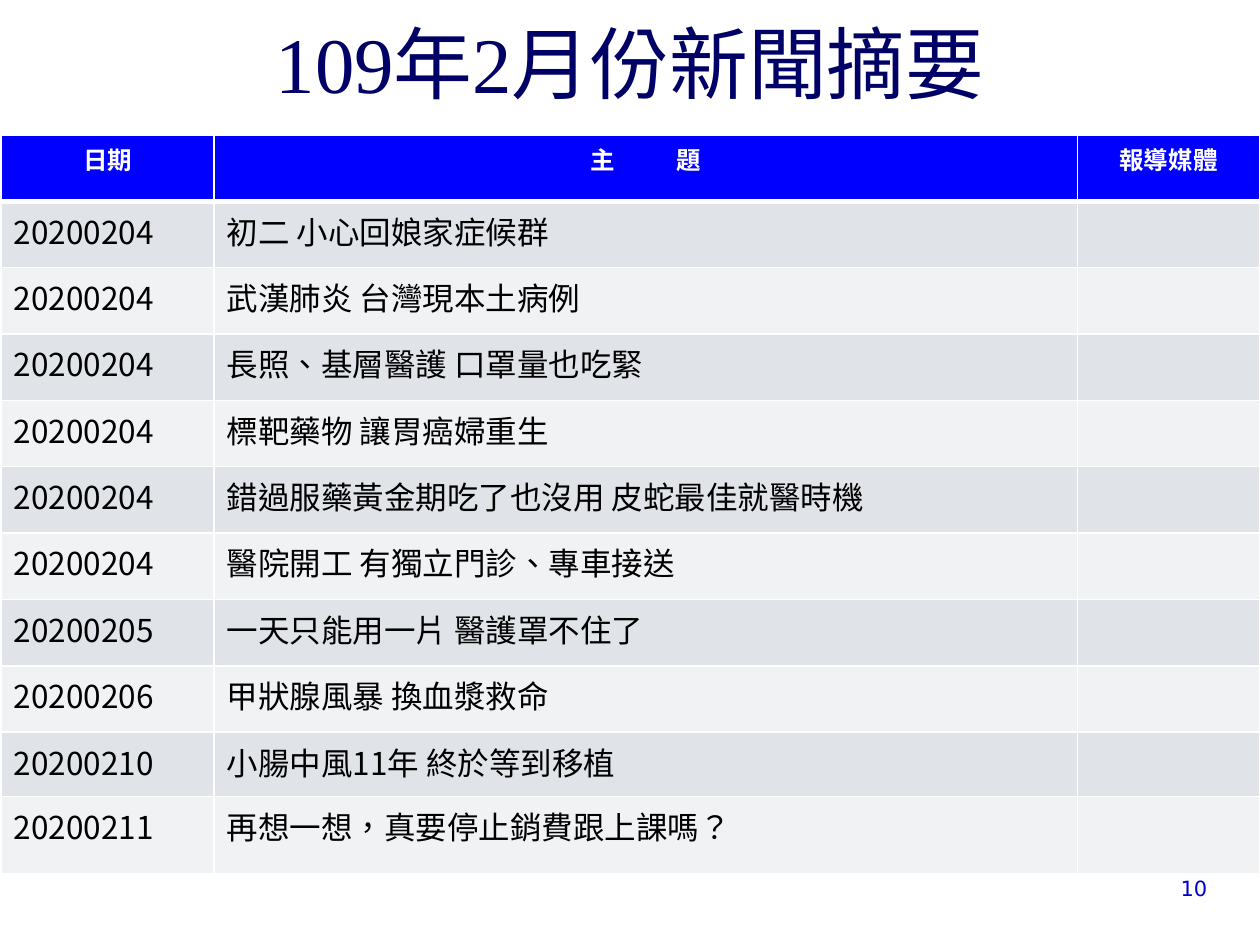
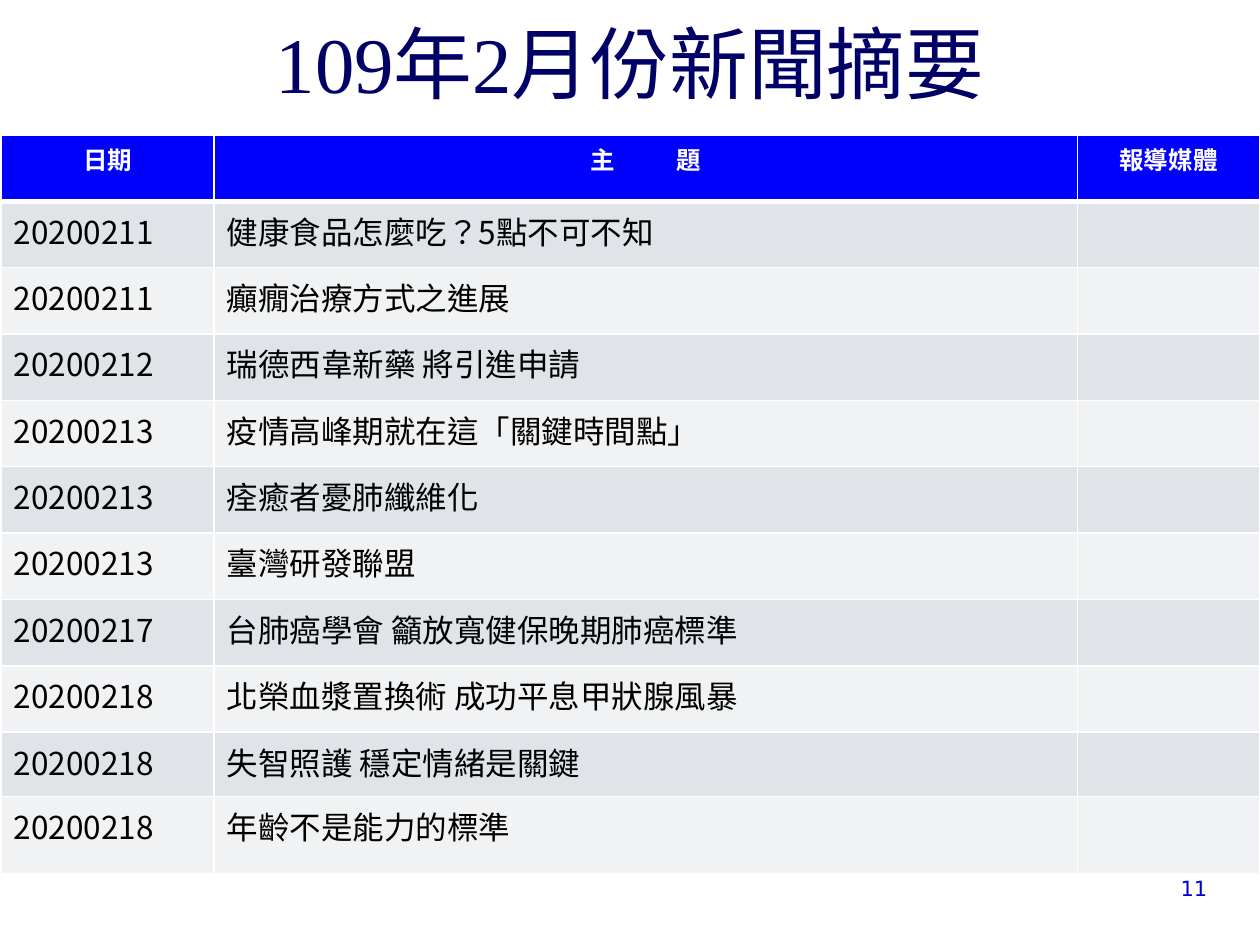
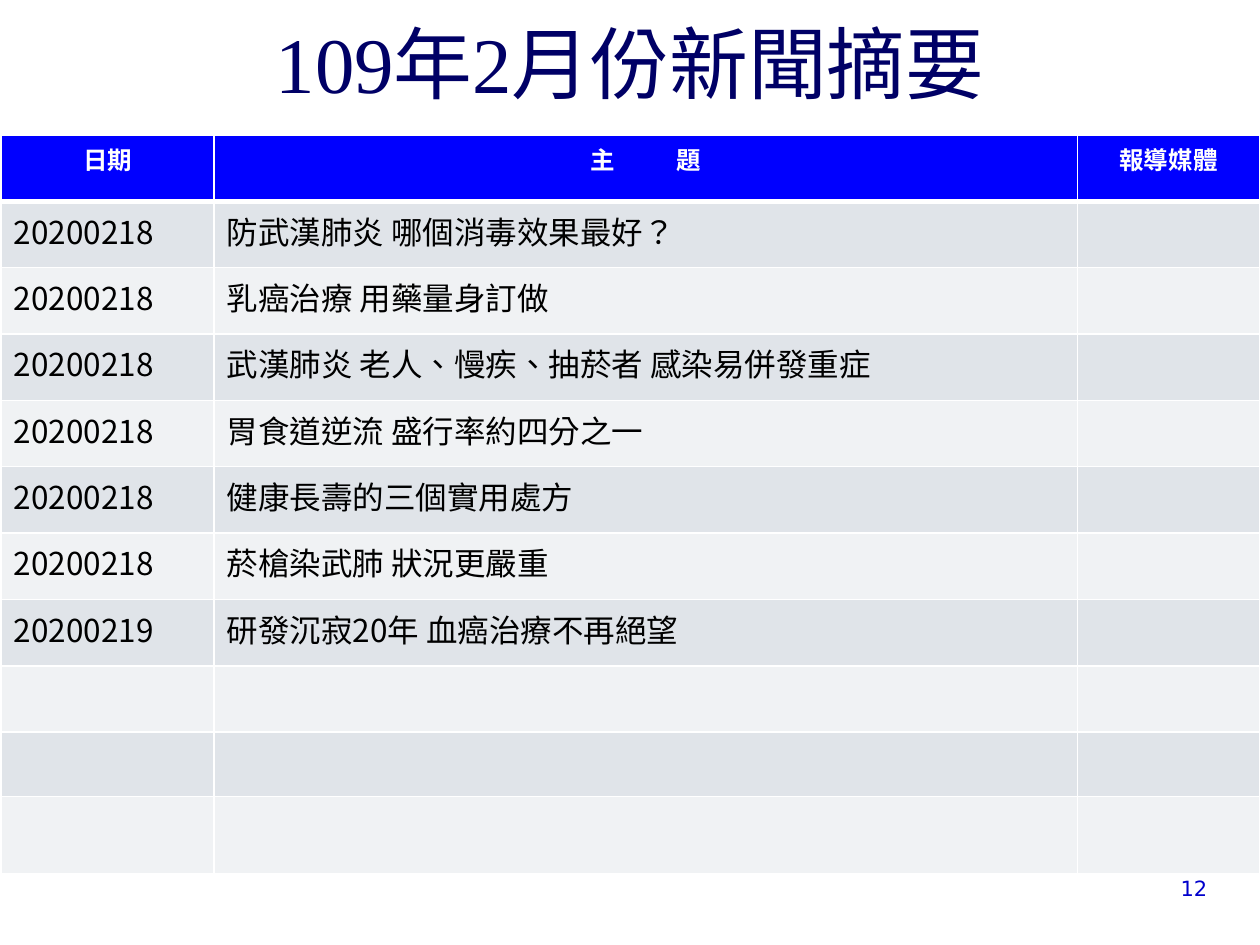
from lxml import etree
from pptx import Presentation
from pptx import util as u
from pptx.dml.color import RGBColor
from pptx.enum import lang, text
from pptx.oxml.ns import qn

COLORS = {
    "title": "000066",
    "number": "0000CC",
    "header": "0000FF",
    "band_dark": "E0E4E9",
    "band_light": "F0F2F4",
    "line": "FFFFFF",
    "header_text": "FFFFFF",
    "body_text": "000000",
}
CJK_FONT = "Noto Sans CJK SC"
FORMATS = {
    "title": {"name": "Times New Roman", "size": u.Pt(45), "bold": False},
    "number": {"name": "DejaVu Sans", "size": u.Pt(12), "bold": False},
    "header_text": {"name": CJK_FONT, "size": u.Pt(14), "bold": True},
    "body_text": {"name": CJK_FONT, "size": u.Pt(18), "bold": False},
}
GRID_COLUMNS, GRID_ROWS = 100, 75

TITLE = "109年2月份新聞摘要"
FIRST_NUMBER = 10
HEADERS = ["日期", "主 題", "報導媒體"]
COLUMN_WIDTHS = [16.9, 68.5, 14.5]
ROW_HEIGHTS = [5.27] * 9 + [5.1, 6.1]
NEWS_PAGES = [
    [
        ("20200204", "初二 小心回娘家症候群"),
        ("20200204", "武漢肺炎 台灣現本土病例"),
        ("20200204", "長照、基層醫護 口罩量也吃緊"),
        ("20200204", "標靶藥物 讓胃癌婦重生"),
        ("20200204", "錯過服藥黃金期吃了也沒用 皮蛇最佳就醫時機"),
        ("20200204", "醫院開工 有獨立門診、專車接送"),
        ("20200205", "一天只能用一片 醫護罩不住了"),
        ("20200206", "甲狀腺風暴 換血漿救命"),
        ("20200210", "小腸中風11年 終於等到移植"),
        ("20200211", "再想一想，真要停止銷費跟上課嗎？"),
    ],
    [
        ("20200211", "健康食品怎麼吃？5點不可不知"),
        ("20200211", "癲癇治療方式之進展"),
        ("20200212", "瑞德西韋新藥 將引進申請"),
        ("20200213", "疫情高峰期就在這「關鍵時間點」"),
        ("20200213", "痊癒者憂肺纖維化"),
        ("20200213", "臺灣研發聯盟"),
        ("20200217", "台肺癌學會 籲放寬健保晚期肺癌標準"),
        ("20200218", "北榮血漿置換術 成功平息甲狀腺風暴"),
        ("20200218", "失智照護 穩定情緒是關鍵"),
        ("20200218", "年齡不是能力的標準"),
    ],
    [
        ("20200218", "防武漢肺炎 哪個消毒效果最好？"),
        ("20200218", "乳癌治療 用藥量身訂做"),
        ("20200218", "武漢肺炎 老人、慢疾、抽菸者 感染易併發重症"),
        ("20200218", "胃食道逆流 盛行率約四分之一"),
        ("20200218", "健康長壽的三個實用處方"),
        ("20200218", "菸槍染武肺 狀況更嚴重"),
        ("20200219", "研發沉寂20年 血癌治療不再絕望"),
    ],
]


class NewsDeck:
    """Holds the shared style and the slide being filled."""

    def __init__(self):
        self.deck = Presentation()
        self.deck.slide_width, self.deck.slide_height = u.Inches(10), u.Inches(7.5)
        self.page = None

    def across(self, columns):
        return round(self.deck.slide_width * columns / GRID_COLUMNS)

    def down(self, rows):
        return round(self.deck.slide_height * rows / GRID_ROWS)

    def area(self, left, top, width, height):
        return self.across(left), self.down(top), self.across(width), self.down(height)

    def add_page(self):
        layout = self.deck.slide_layouts.get_by_name("Title Only")
        self.page = self.deck.slides.add_slide(layout)

    def add_span(self, para, words, style):
        span = para.add_run()
        span.text = words
        for name, value in FORMATS[style].items():
            setattr(span.font, name, value)
        span.font.color.rgb = RGBColor.from_string(COLORS[style])
        span.font.language_id = lang.MSO_LANGUAGE_ID.TRADITIONAL_CHINESE
        etree.SubElement(span.font._element, qn("a:ea"), typeface=CJK_FONT)
        return span

    def add_title(self, words):
        box = self.page.shapes.title
        box.left, box.top, box.width, box.height = self.area(6.25, 3.4, 87.5, 5.8)
        frame = box.text_frame
        frame.auto_size = text.MSO_AUTO_SIZE.NONE
        frame.vertical_anchor = text.MSO_ANCHOR.BOTTOM
        para = frame.paragraphs[0]
        para.alignment = text.PP_ALIGN.CENTER
        self.add_span(para, words, "title")

    def add_number(self, number):
        box = self.page.shapes.add_textbox(*self.area(89.4, 69, 7.4, 3))
        box.text_frame.word_wrap = True
        para = box.text_frame.paragraphs[0]
        para.alignment = text.PP_ALIGN.RIGHT
        self.add_span(para, str(number), "number")

    def add_header_words(self, cell, words):
        """Spread the words of a heading apart by widening the space between them."""
        para = cell.text_frame.paragraphs[0]
        para.alignment = text.PP_ALIGN.CENTER
        first, space, last = words.partition(" ")
        self.add_span(para, first, "header_text")
        if space:
            gap = self.add_span(para, space, "header_text")
            gap.font._element.set("spc", "3200")
            self.add_span(para, last, "header_text")

    def style_cell(self, cell, fill, top, bottom):
        """Draw the borders, in points, before the fill, as the schema orders them."""
        properties = cell._tc.get_or_add_tcPr()
        for side, width in {"L": 1, "R": 1, "T": top, "B": bottom}.items():
            line = etree.SubElement(properties, qn(f"a:ln{side}"), w=str(u.Pt(width)))
            solid = etree.SubElement(line, qn("a:solidFill"))
            etree.SubElement(solid, qn("a:srgbClr"), val=COLORS["line"])
        cell.fill.solid()
        cell.fill.fore_color.rgb = RGBColor.from_string(COLORS[fill])

    def add_news_table(self, news):
        area = self.area(0.1, 10.7, sum(COLUMN_WIDTHS), sum(ROW_HEIGHTS))
        table = self.page.shapes.add_table(
            len(ROW_HEIGHTS), len(COLUMN_WIDTHS), *area).table
        for column, width in zip(table.columns, COLUMN_WIDTHS):
            column.width = self.across(width)
        for index, (row, height) in enumerate(zip(table.rows, ROW_HEIGHTS)):
            row.height = self.down(height)
            fill = "band_dark" if index % 2 else "band_light"
            for cell in row.cells:
                self.style_cell(cell, fill if index else "header",
                                top=3 if index == 1 else 1,
                                bottom=1 if index else 3)
        for column, words in enumerate(HEADERS):
            self.add_header_words(table.cell(0, column), words)
        for row, entry in enumerate(news, start=1):
            for column, words in enumerate(entry):
                para = table.cell(row, column).text_frame.paragraphs[0]
                self.add_span(para, words, "body_text")


def main():
    news_deck = NewsDeck()
    for number, news in enumerate(NEWS_PAGES, start=FIRST_NUMBER):
        news_deck.add_page()
        news_deck.add_title(TITLE)
        news_deck.add_news_table(news)
        news_deck.add_number(number)
    news_deck.deck.save("out.pptx")


if __name__ == "__main__":
    main()
